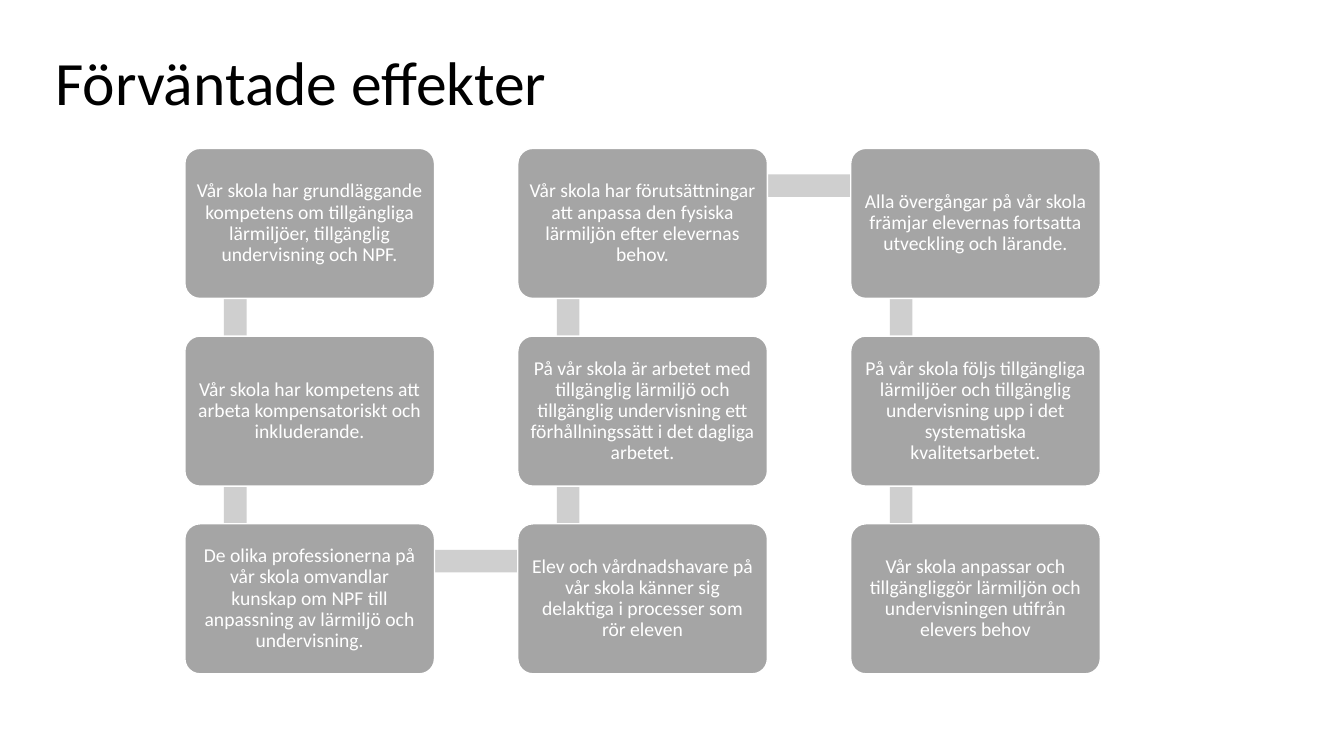
from itertools import pairwise

from pptx import Presentation
from pptx.dml.color import RGBColor
from pptx.enum.shapes import MSO_SHAPE
from pptx.enum.text import MSO_ANCHOR, PP_ALIGN
from pptx.util import Cm, Pt

BLACK = RGBColor(0x00, 0x00, 0x00)
WHITE = RGBColor(0xFF, 0xFF, 0xFF)
CARD_GREY = RGBColor(0xA5, 0xA5, 0xA5)
BAR_GREY = RGBColor(0xCF, 0xCF, 0xCF)

GRID_LEFT, GRID_TOP = 4.66, 3.74
COLUMN_STEP, ROW_STEP = 8.39, 4.73
CARD_WIDTH, CARD_HEIGHT = 6.29, 3.78
JOINT_X, JOINT_Y = 1.27, 0.94
BAR_THICKNESS = 0.57

CARDS = [
    (0, 0, "Vår skola har grundläggande kompetens om tillgängliga lärmiljöer, tillgänglig undervisning och NPF."),
    (0, 1, "Vår skola har kompetens att arbeta kompensatoriskt och inkluderande."),
    (0, 2, "De olika professionerna på vår skola omvandlar kunskap om NPF till anpassning av lärmiljö och undervisning."),
    (1, 2, "Elev och vårdnadshavare på vår skola känner sig delaktiga i processer som rör eleven"),
    (1, 1, "På vår skola är arbetet med tillgänglig lärmiljö och tillgänglig undervisning ett förhållningssätt i det dagliga arbetet."),
    (1, 0, "Vår skola har förutsättningar att anpassa den fysiska lärmiljön efter elevernas behov."),
    (2, 0, "Alla övergångar på vår skola främjar elevernas fortsatta utveckling och lärande."),
    (2, 1, "På vår skola följs tillgängliga lärmiljöer och tillgänglig undervisning upp i det systematiska kvalitetsarbetet."),
    (2, 2, "Vår skola anpassar och tillgängliggör lärmiljön och undervisningen utifrån elevers behov"),
]


def write_text(frame, text, *, size, color, align=PP_ALIGN.LEFT, inset_x=0.25, inset_y=0.13):
    frame.word_wrap = True
    frame.vertical_anchor = MSO_ANCHOR.MIDDLE
    frame.margin_left = frame.margin_right = Cm(inset_x)
    frame.margin_top = frame.margin_bottom = Cm(inset_y)
    paragraph = frame.paragraphs[0]
    paragraph.text = text
    paragraph.alignment = align
    paragraph.line_spacing = 0.9
    font = paragraph.runs[0].font
    font.name = "Calibri"
    font.size = Pt(size)
    font.color.rgb = color


class EffectsSlide:
    """Holds the slide and draws its title, linking bars and cards."""

    def __init__(self, slide):
        self.slide = slide

    def add_title(self, text):
        box = self.slide.shapes.add_textbox(Cm(1.14), Cm(1.12), Cm(25.48), Cm(2.06))
        write_text(box.text_frame, text, size=44, color=BLACK)

    def add_block(self, kind, left, top, width, height, fill):
        shape = self.slide.shapes.add_shape(kind, Cm(left), Cm(top), Cm(width), Cm(height))
        shape.shadow.inherit = False
        shape.fill.solid()
        shape.fill.fore_color.rgb = fill
        shape.line.fill.background()
        return shape

    def add_bar(self, start, end):
        column, row = min(start[0], end[0]), min(start[1], end[1])
        left = GRID_LEFT + column * COLUMN_STEP + JOINT_X
        top = GRID_TOP + row * ROW_STEP + JOINT_Y
        half = BAR_THICKNESS / 2
        if start[0] == end[0]:
            self.add_block(MSO_SHAPE.RECTANGLE, left - half, top, BAR_THICKNESS, ROW_STEP, BAR_GREY)
        else:
            self.add_block(MSO_SHAPE.RECTANGLE, left, top - half, COLUMN_STEP, BAR_THICKNESS, BAR_GREY)

    def add_card(self, column, row, text):
        card = self.add_block(
            MSO_SHAPE.ROUNDED_RECTANGLE,
            GRID_LEFT + column * COLUMN_STEP, GRID_TOP + row * ROW_STEP,
            CARD_WIDTH, CARD_HEIGHT, CARD_GREY,
        )
        card.adjustments[0] = 0.1
        card.line.color.rgb = WHITE
        card.line.width = Pt(1)
        write_text(card.text_frame, text, size=14, color=WHITE, align=PP_ALIGN.CENTER,
                   inset_x=0.15, inset_y=0.15)


def main():
    presentation = Presentation()
    presentation.slide_width = Cm(33.87)
    presentation.slide_height = Cm(19.05)
    effects = EffectsSlide(presentation.slides.add_slide(presentation.slide_layouts[6]))
    effects.add_title("Förväntade effekter")
    for start, end in pairwise(CARDS):
        effects.add_bar(start, end)
    for column, row, text in CARDS:
        effects.add_card(column, row, text)
    presentation.save("out.pptx")


if __name__ == "__main__":
    main()
